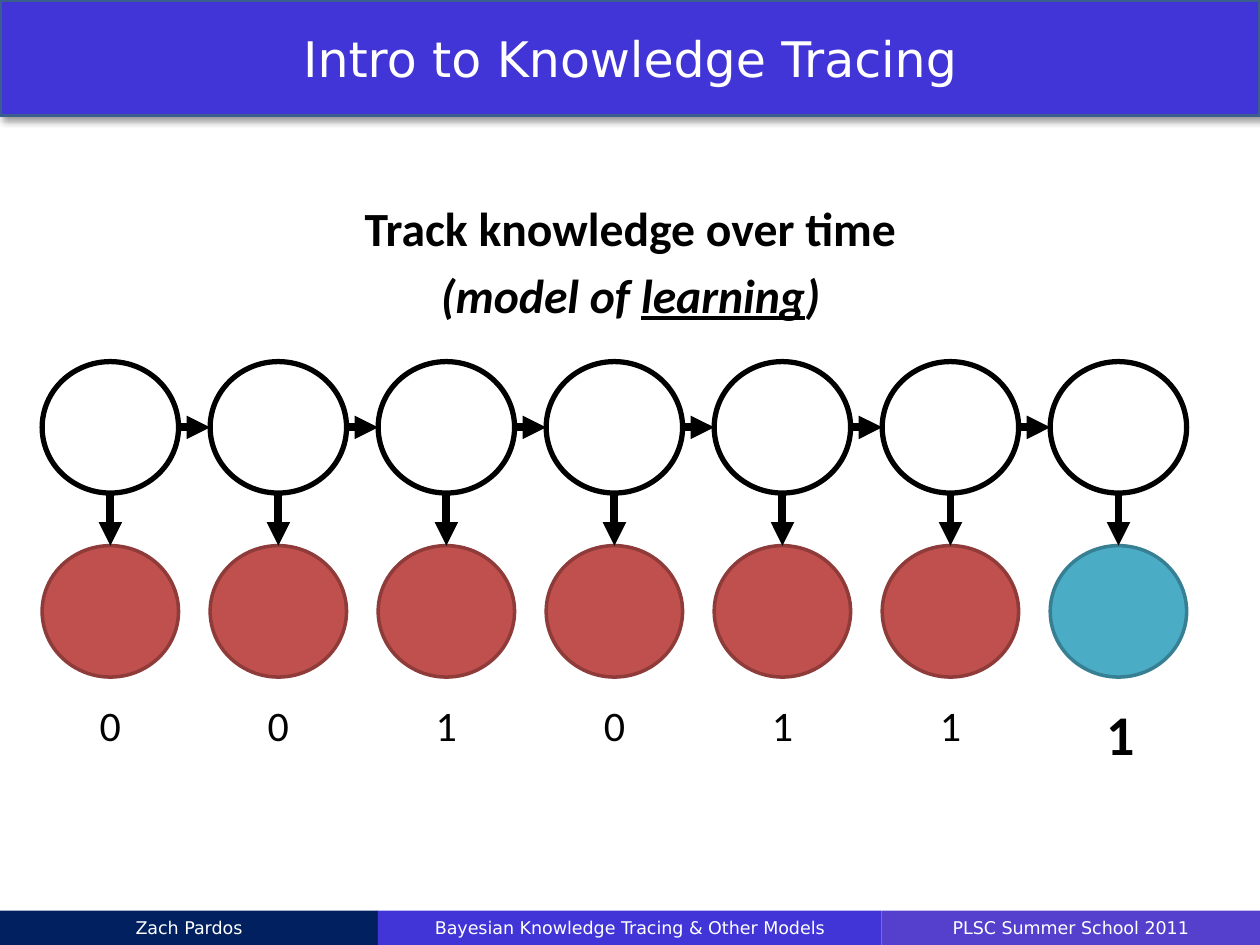
import pptx
import pptx.dml.color
import pptx.enum.shapes
import pptx.enum.text
import pptx.oxml
import pptx.oxml.ns
import pptx.util
from lxml import etree

Cm = pptx.util.Cm
Pt = pptx.util.Pt
RGBColor = pptx.dml.color.RGBColor
SHAPE = pptx.enum.shapes.MSO_SHAPE
CENTER = pptx.enum.text.PP_ALIGN.CENTER
MIDDLE = pptx.enum.text.MSO_ANCHOR.MIDDLE
qn = pptx.oxml.ns.qn

BLACK = RGBColor(0x00, 0x00, 0x00)
WHITE = RGBColor(0xFF, 0xFF, 0xFF)
BLUE = RGBColor(0x41, 0x35, 0xD7)
BLUE_EDGE = RGBColor(0x3A, 0x5F, 0x8C)
VIOLET = RGBColor(0x54, 0x40, 0xCC)
NAVY = RGBColor(0x00, 0x20, 0x60)
RED = RGBColor(0xC0, 0x50, 0x4D)
RED_EDGE = RGBColor(0x8E, 0x3B, 0x39)
TEAL = RGBColor(0x4B, 0xAC, 0xC6)
TEAL_EDGE = RGBColor(0x37, 0x7F, 0x92)

TITLE = "Intro to Knowledge Tracing"
# Each line is a list of (text, italic, underline)
HEADING = [
    [("Track knowledge over time", False, False)],
    [("(model of ", True, False), ("learning", True, True), (")", True, False)],
]
ANSWERS = ["0", "0", "1", "0", "1", "1", "1"]
FOOTER = [  # text, width in cm, fill
    ("Zach Pardos", 7.62, NAVY),
    ("Bayesian Knowledge Tracing & Other Models", 10.15, BLUE),
    ("PLSC Summer School 2011", 7.63, VIOLET),
]

# Node grid, in cm
LEFT, STEP = 0.85, 3.387
NODE_WIDTH, NODE_HEIGHT = 2.75, 2.65
KNOWLEDGE_TOP, ANSWER_TOP, LABEL_TOP = 7.29, 11.0, 13.97
LABEL_WIDTH, LABEL_HEIGHT = 1, 1.27


def style_span(span, size, color, font, bold=False):
    span.font.size = Pt(size)
    span.font.color.rgb = color
    span.font.name = font
    span.font.bold = bold


def add_filled(page, kind, left, top, width, height, fill, edge=None, weight=2):
    shape = page.shapes.add_shape(kind, Cm(left), Cm(top), Cm(width), Cm(height))
    shape.shadow.inherit = False
    shape.fill.solid()
    shape.fill.fore_color.rgb = fill
    if edge is None:
        shape.line.fill.background()
    else:
        shape.line.color.rgb = edge
        shape.line.width = Pt(weight)
    return shape


def add_bar(page, text, size, *geometry_and_colors):
    bar = add_filled(page, SHAPE.RECTANGLE, *geometry_and_colors)
    frame = bar.text_frame
    frame.text = text
    frame.vertical_anchor = MIDDLE
    para = frame.paragraphs[0]
    para.alignment = CENTER
    style_span(para.runs[0], size, WHITE, "DejaVu Sans")
    return bar


def add_node(page, column, top, fill, edge, weight):
    return add_filled(page, SHAPE.FLOWCHART_CONNECTOR, LEFT + column * STEP, top,
                      NODE_WIDTH, NODE_HEIGHT, fill, edge, weight)


def add_arrow(page, x1, y1, x2, y2):
    arrow = page.shapes.add_connector(
        pptx.enum.shapes.MSO_CONNECTOR.STRAIGHT, Cm(x1), Cm(y1), Cm(x2), Cm(y2))
    arrow.line.color.rgb = BLACK
    arrow.line.width = Pt(4.5)
    etree.SubElement(arrow.line._get_or_add_ln(), qn("a:tailEnd"), type="triangle")
    etree.SubElement(arrow._element.spPr, qn("a:effectLst"))


def add_drop_shadow(shape):
    effects = shape._element.spPr.find(qn("a:effectLst"))
    shadow = etree.SubElement(effects, qn("a:outerShdw"), blurRad=str(Pt(4)),
                              dist=str(Pt(3)), dir="2700000", algn="tl", rotWithShape="0")
    color = etree.SubElement(shadow, qn("a:srgbClr"), val=str(BLACK))
    etree.SubElement(color, qn("a:alpha"), val="40000")


def add_heading(page):
    box = page.shapes.add_textbox(Cm(0.02), Cm(3.89), Cm(25.38), Cm(2.46))
    frame = box.text_frame
    frame.word_wrap = True
    for number, line in enumerate(HEADING):
        para = frame.add_paragraph() if number else frame.paragraphs[0]
        para.alignment = CENTER
        para.space_before = Pt(5.4)
        for text, italic, underline in line:
            span = para.add_run()
            span.text = text
            style_span(span, 27.2, BLACK, "Calibri", bold=True)
            span.font.italic = italic
            span.font.underline = underline


def add_answer_label(page, center, text, last):
    box = page.shapes.add_textbox(Cm(center - LABEL_WIDTH / 2), Cm(LABEL_TOP),
                                  Cm(LABEL_WIDTH), Cm(LABEL_HEIGHT))
    frame = box.text_frame
    frame.word_wrap = False
    frame.text = text
    para = frame.paragraphs[0]
    para.alignment = CENTER
    style_span(para.runs[0], 32 if last else 24, BLACK, "Calibri", bold=last)


def add_model(page):
    for column, answer in enumerate(ANSWERS):
        last = column == len(ANSWERS) - 1
        left = LEFT + column * STEP
        center = left + NODE_WIDTH / 2
        fill, edge = (TEAL, TEAL_EDGE) if last else (RED, RED_EDGE)
        add_node(page, column, ANSWER_TOP, fill, edge, 2)
        add_node(page, column, KNOWLEDGE_TOP, WHITE, BLACK, 3)
        add_answer_label(page, center, answer, last)
        add_arrow(page, center, KNOWLEDGE_TOP + NODE_HEIGHT, center, ANSWER_TOP)
        if not last:
            middle = KNOWLEDGE_TOP + NODE_HEIGHT / 2
            add_arrow(page, left + NODE_WIDTH, middle, left + STEP, middle)


def main():
    deck = pptx.Presentation()
    deck.slide_width, deck.slide_height = Cm(25.4), Cm(19.05)
    page = deck.slides.add_slide(deck.slide_layouts[6])

    add_heading(page)
    add_model(page)
    title_bar = add_bar(page, TITLE, 28, 0, 0, 25.4, 2.33, BLUE, BLUE_EDGE)
    add_drop_shadow(title_bar)
    left = 0
    for text, width, fill in FOOTER:
        add_bar(page, text, 10, left, 18.36, width, 0.69, fill)
        left += width

    deck.save("out.pptx")


if __name__ == "__main__":
    main()
